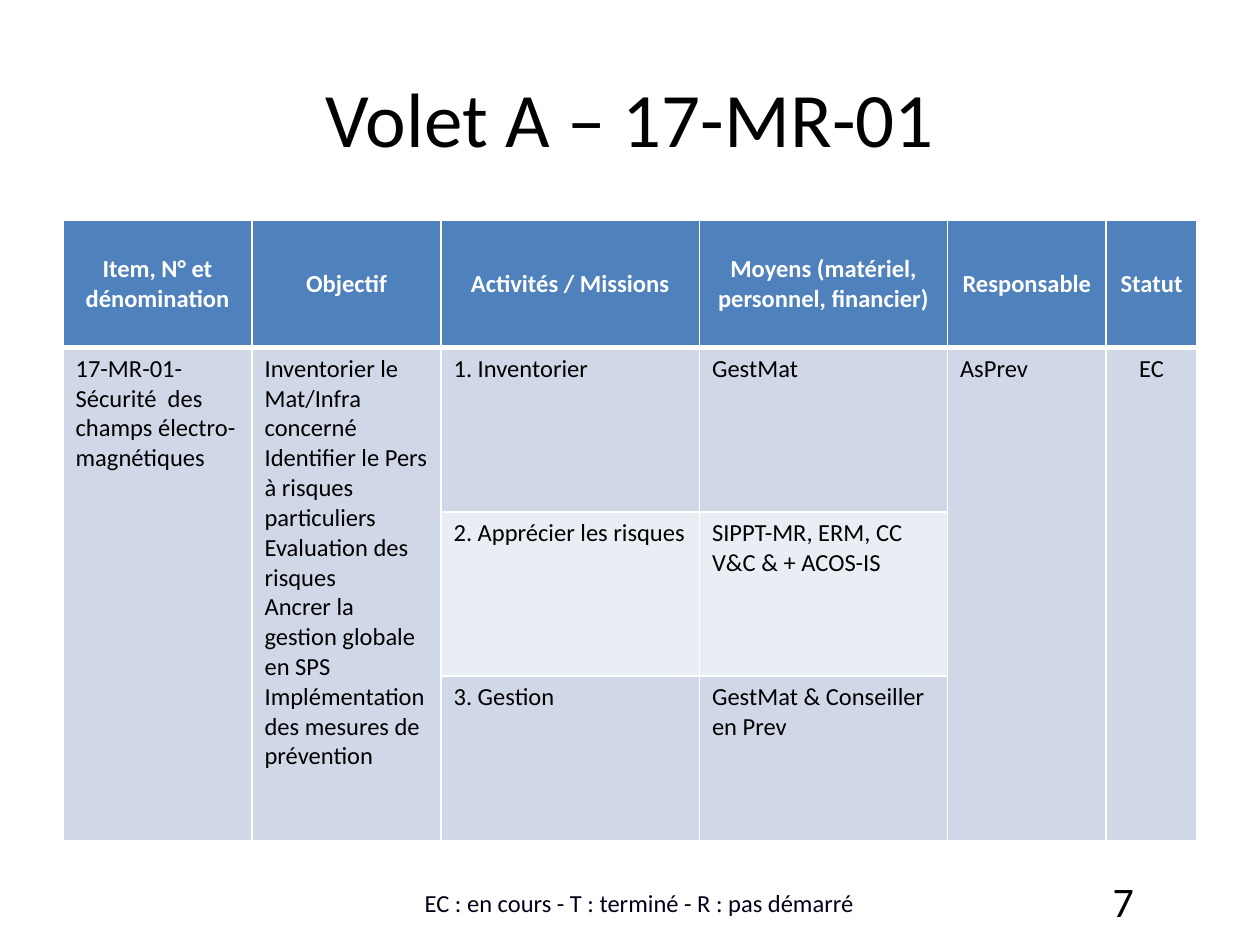
from lxml import etree
from pptx import Presentation
from pptx.dml.color import RGBColor
from pptx.enum.text import MSO_ANCHOR, PP_ALIGN
from pptx.oxml.ns import qn
from pptx.util import Cm, Pt

LEFT, CENTER, RIGHT = PP_ALIGN.LEFT, PP_ALIGN.CENTER, PP_ALIGN.RIGHT
TOP, MIDDLE, BOTTOM = MSO_ANCHOR.TOP, MSO_ANCHOR.MIDDLE, MSO_ANCHOR.BOTTOM

FONT = "Calibri"
BLACK, WHITE, LEGEND_COLOR = "000000", "FFFFFF", "000018"
HEADER_FILL, BAND_FILLS = "4F81BD", ("E9EDF4", "D0D8E8")

TITLE = "Volet A – 17-MR-01"
LEGEND = "EC : en cours - T : terminé - R : pas démarré"
PAGE_NUMBER = "7"
HEADERS = [
    "Item, N° et dénomination",
    "Objectif",
    "Activités / Missions",
    "Moyens (matériel, personnel, financier)",
    "Responsable",
    "Statut",
]
OBJECTIVES = [
    "Inventorier le Mat/Infra concerné",
    "Identifier le Pers à risques particuliers",
    "Evaluation des risques",
    "Ancrer la gestion globale en SPS",
    "Implémentation des mesures de prévention",
]
MERGED_CELLS = {
    0: "17-MR-01-Sécurité  des champs électro-magnétiques",
    1: "\n".join(OBJECTIVES),
    4: "AsPrev",
    5: "EC",
}
ACTIVITIES = [
    ("1. Inventorier", "GestMat"),
    ("2. Apprécier les risques", "SIPPT-MR, ERM, CC V&C & + ACOS-IS"),
    ("3. Gestion", "GestMat & Conseiller en Prev"),
]
ACTIVITY_COLUMN = 2
STATUS_COLUMN = 5

COLUMN_WIDTHS = [3.81, 3.81, 5.21, 5.0, 3.2, 1.83]
HEADER_HEIGHT, ROW_HEIGHT = 2.56, 3.31
TABLE_LEFT, TABLE_TOP = 1.27, 4.45


def rgb(value):
    return RGBColor.from_string(value)


def write_text(frame, text, size=14, color=BLACK, bold=False, align=LEFT):
    frame.word_wrap = True
    frame.text = text
    for paragraph in frame.paragraphs:
        paragraph.alignment = align
        for run in paragraph.runs:
            run.font.name = FONT
            run.font.size = Pt(size)
            run.font.bold = bold
            run.font.color.rgb = rgb(color)


def add_text(slide, box, text, anchor=MIDDLE, **text_format):
    shape = slide.shapes.add_textbox(*(Cm(length) for length in box))
    shape.text_frame.vertical_anchor = anchor
    write_text(shape.text_frame, text, **text_format)


def set_borders(cell, top=1, bottom=1):
    properties = cell._tc.get_or_add_tcPr()
    for side, width in (("L", 1), ("R", 1), ("T", top), ("B", bottom)):
        line = etree.SubElement(properties, qn(f"a:ln{side}"), w=str(Pt(width)))
        fill = etree.SubElement(line, qn("a:solidFill"))
        etree.SubElement(fill, qn("a:srgbClr"), val=WHITE)


def fill_cell(cell, color):
    cell.fill.solid()
    cell.fill.fore_color.rgb = rgb(color)


def add_plan(slide):
    row_heights = [HEADER_HEIGHT] + [ROW_HEIGHT] * len(ACTIVITIES)
    table = slide.shapes.add_table(
        len(row_heights), len(HEADERS), Cm(TABLE_LEFT), Cm(TABLE_TOP),
        Cm(sum(COLUMN_WIDTHS)), Cm(sum(row_heights)),
    ).table
    for column, width in zip(table.columns, COLUMN_WIDTHS):
        column.width = Cm(width)
    for row, height in zip(table.rows, row_heights):
        row.height = Cm(height)

    for column, header in enumerate(HEADERS):
        cell = table.cell(0, column)
        set_borders(cell, bottom=3)
        fill_cell(cell, HEADER_FILL)
        cell.vertical_anchor = MIDDLE
        write_text(cell.text_frame, header, color=WHITE, bold=True, align=CENTER)
        for row in range(1, len(row_heights)):
            cell = table.cell(row, column)
            set_borders(cell, top=3 if row == 1 else 1)
            fill_cell(cell, BAND_FILLS[1 if column in MERGED_CELLS else row % 2])
            cell.vertical_anchor = TOP

    for column, text in MERGED_CELLS.items():
        cell = table.cell(1, column)
        cell.merge(table.cell(len(ACTIVITIES), column))
        align = CENTER if column == STATUS_COLUMN else LEFT
        write_text(cell.text_frame, text, align=align)
    for row, activity in enumerate(ACTIVITIES, 1):
        for column, text in enumerate(activity, ACTIVITY_COLUMN):
            write_text(table.cell(row, column).text_frame, text)


def main():
    presentation = Presentation()
    presentation.slide_width, presentation.slide_height = Cm(25.4), Cm(19.05)
    slide = presentation.slides.add_slide(presentation.slide_layouts[6])
    add_text(slide, (1.27, 0.76, 22.86, 3.18), TITLE, size=44, align=CENTER)
    add_plan(slide)
    add_text(slide, (18.21, 17.65, 4.9, 1.02), PAGE_NUMBER, size=24, align=RIGHT)
    add_text(slide, (5.89, 17.65, 14, 0.97), LEGEND, anchor=BOTTOM,
             color=LEGEND_COLOR, align=CENTER)
    presentation.save("out.pptx")


if __name__ == "__main__":
    main()
